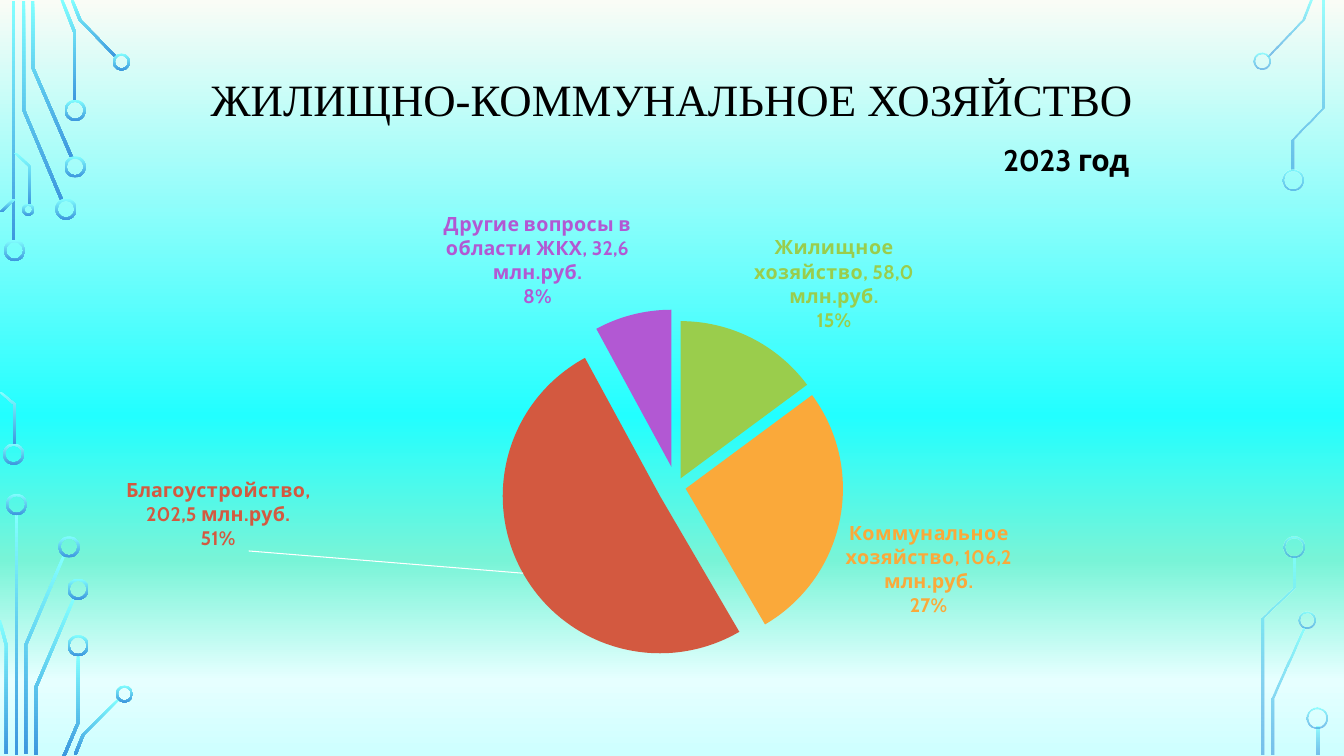
"""Build the housing and utilities budget slide: circuit border, title and pie chart."""
from pptx import Presentation
from pptx.chart.data import CategoryChartData
from pptx.dml.color import RGBColor
from pptx.enum.chart import XL_CHART_TYPE
from pptx.enum.shapes import MSO_SHAPE
from pptx.enum.text import MSO_ANCHOR, PP_ALIGN
from pptx.oxml import parse_xml
from pptx.oxml.ns import nsdecls, qn
from pptx.util import Pt

PX = 9144
SLIDE_SIZE = (1333, 750)
TITLE = "ЖИЛИЩНО-КОММУНАЛЬНОЕ ХОЗЯЙСТВО"
TITLE_BOX = (125, 68, 1083, 67)
CHART_BOX = (125, 129, 1083, 563)
CHART_TITLE = "2023 год"
CHART_TITLE_AT = (865, 4)
PIE_BOX = (390, 198, 312, 312)
SLICES = [
    ("Жилищное хозяйство, 58,0 млн.руб.", 15, "9ACD4C", 6, (0, 0)),
    ("Коммунальное хозяйство, 106,2 млн.руб.", 27, "FAA93A", 6, (0, 0)),
    ("Благоустройство, 202,5 млн.руб.", 51, "D35940", 12, (-267, -97)),
    ("Другие вопросы в области ЖКХ, 32,6 млн.руб.", 8, "B258D3", 13, (0, 0)),
]
BACKGROUND = [(0, "FAFCF6", 100), (55, "22FFFF", 100), (74, "78F4D7", 100),
              (90, "E6FFFF", 100), (100, "CDFFFF", 100)]
LEFT_GRADIENT = [(0, "82FFFF", 100), (100, "3D97DE", 100)]
RIGHT_GRADIENT = [(0, "82FFFF", 80), (100, "3D97DE", 60)]
TRACE_WIDTH = 3
RING_WIDTH = 2
LEFT_TRACES = [
    [(12, 1), (12, 240)], [(22, 1), (22, 109), (60, 199)],
    [(31, 1), (31, 67), (70, 157)], [(60, 0), (73, 33), (73, 100)],
    [(70, 0), (78, 20), (114, 57)], [(13, 197), (0, 210)],
    [(-1, 389), (13, 401), (13, 441)], [(14, 152), (28, 165), (28, 203)],
    [(15, 510), (15, 749)], [(62, 551), (24, 640), (24, 748)],
    [(-2, 615), (5, 641), (5, 748)], [(72, 593), (34, 682), (34, 749)],
    [(76, 650), (76, 717), (62, 750)], [(117, 693), (81, 729), (73, 749)],
]
RIGHT_TRACES = [
    [(1299, 0), (1291, 20), (1256, 56)], [(1292, 623), (1261, 693), (1261, 749)],
    [(1311, 1), (1311, 107), (1281, 138), (1281, 169)],
    [(1282, 552), (1282, 583), (1251, 613), (1251, 749)],
    [(1306, 721), (1306, 749)],
]
LEFT_RINGS = [(4, 238, 21), (3, 440, 21), (55, 197, 21), (64, 155, 21), (64, 99, 21),
              (112, 53, 17), (22, 202, 12), (6, 490, 21), (58, 532, 21), (67, 574, 21),
              (67, 630, 21), (115, 680, 17)]
RIGHT_RINGS = [(1243, 52, 17), (1272, 168, 21), (1288, 607, 17), (1273, 532, 21),
               (1296, 702, 21)]


def color(value):
    return RGBColor.from_string(value)


def emu(lengths):
    return [length * PX for length in lengths]


def fill_gradient(fill, element, stops):
    fill.gradient()
    fill.gradient_angle = 270
    stop_list = element.find(".//" + qn("a:gsLst"))
    entries = "".join(
        f'<a:gs pos="{position * 1000}"><a:srgbClr val="{value}">'
        f'<a:alpha val="{opacity * 1000}"/></a:srgbClr></a:gs>'
        for position, value, opacity in stops)
    stop_list.getparent().replace(
        stop_list, parse_xml(f'<a:gsLst {nsdecls("a")}>{entries}</a:gsLst>'))


def finish_shape(shape, stops):
    shape.shadow.inherit = False
    shape.line.fill.background()
    fill_gradient(shape.fill, shape._element, stops)


def add_trace(slide, left_edge, stops):
    right_edge = [(x + TRACE_WIDTH, y) for x, y in reversed(left_edge)]
    builder = slide.shapes.build_freeform(*left_edge[0], scale=PX)
    builder.add_line_segments(left_edge[1:] + right_edge, close=True)
    finish_shape(builder.convert_to_shape(), stops)


def add_ring(slide, left, top, size, stops):
    ring = slide.shapes.add_shape(MSO_SHAPE.DONUT, *emu((left, top, size, size)))
    ring.adjustments[0] = RING_WIDTH / size
    finish_shape(ring, stops)


def add_title(slide):
    frame = slide.shapes.add_textbox(*emu(TITLE_BOX)).text_frame
    frame.word_wrap = True
    frame.vertical_anchor = MSO_ANCHOR.MIDDLE
    paragraph = frame.paragraphs[0]
    paragraph.text = TITLE
    paragraph.alignment = PP_ALIGN.CENTER
    paragraph.line_spacing = 0.9
    paragraph.font.size = Pt(32)
    paragraph.font.name = "Times New Roman"
    paragraph.font.color.rgb = color("000000")


def layout_xml(x, y, size=None, mode="edge"):
    width, height = CHART_BOX[2:]
    target = '<c:layoutTarget val="inner"/>' if size else ""
    modes = '<c:xMode val="edge"/><c:yMode val="edge"/>' if mode == "edge" else ""
    extent = (f'<c:w val="{size[0] / width:.4f}"/><c:h val="{size[1] / height:.4f}"/>'
              if size else "")
    return (f'<c:layout {nsdecls("c")}><c:manualLayout>{target}{modes}'
            f'<c:x val="{x / width:.4f}"/><c:y val="{y / height:.4f}"/>{extent}'
            '</c:manualLayout></c:layout>')


def labels_xml():
    shown = ('<c:showLegendKey val="0"/><c:showVal val="1"/><c:showCatName val="1"/>'
             '<c:showSerName val="0"/><c:showPercent val="0"/><c:showBubbleSize val="0"/>'
             '<c:separator>\n</c:separator>')
    number_format = '<c:numFmt formatCode="0&quot;%&quot;" sourceLinked="0"/>'
    labels = "".join(
        f'<c:dLbl><c:idx val="{index}"/>'
        f'{layout_xml(*offset, mode="factor") if any(offset) else ""}{number_format}'
        '<c:txPr><a:bodyPr/><a:p><a:pPr><a:defRPr sz="1400" b="1"><a:solidFill>'
        f'<a:srgbClr val="{value}"/></a:solidFill><a:latin typeface="Cabin"/></a:defRPr>'
        f'</a:pPr></a:p></c:txPr><c:dLblPos val="outEnd"/>{shown}</c:dLbl>'
        for index, (_, _, value, _, offset) in enumerate(SLICES))
    return (f'<c:dLbls {nsdecls("c", "a")}>{labels}{number_format}'
            f'<c:dLblPos val="outEnd"/>{shown}<c:showLeaderLines val="1"/>'
            '<c:leaderLines><c:spPr><a:ln w="9525"><a:solidFill><a:srgbClr val="FFFFFF"/>'
            '</a:solidFill></a:ln></c:spPr></c:leaderLines></c:dLbls>')


def add_pie(slide):
    data = CategoryChartData(number_format="0")
    data.categories = [entry[0] for entry in SLICES]
    data.add_series(CHART_TITLE, [entry[1] for entry in SLICES])
    chart = slide.shapes.add_chart(XL_CHART_TYPE.PIE, *emu(CHART_BOX), data).chart
    chart.has_legend = False
    chart.font.size = Pt(10)
    chart.font.name = "Cabin"
    chart.font.color.rgb = color("FFFFFF")
    chart.has_title = True
    title = chart.chart_title
    title.include_in_layout = False
    paragraph = title.text_frame.paragraphs[0]
    paragraph.text = CHART_TITLE
    paragraph.font.size = Pt(21.3)
    paragraph.font.bold = True
    paragraph.font.name = "Cabin"
    paragraph.font.color.rgb = color("000000")
    plot_area = chart._chartSpace.find(".//" + qn("c:plotArea"))
    for element, layout in ((title._element, layout_xml(*CHART_TITLE_AT)),
                            (plot_area, layout_xml(*PIE_BOX[:2], PIE_BOX[2:]))):
        for old in element.findall(qn("c:layout")):
            element.remove(old)
        element.insert(1 if element is title._element else 0, parse_xml(layout))
    plot = chart.plots[0]
    plot.vary_by_categories = True
    series = plot.series[0]
    for index, (_, _, value, explosion, _) in enumerate(SLICES):
        point_format = series.points[index].format
        point_format.fill.solid()
        point_format.fill.fore_color.rgb = color(value)
        point_format.line.fill.background()
        point = series._element.findall(qn("c:dPt"))[index]
        point.find(qn("c:spPr")).addprevious(
            parse_xml(f'<c:explosion {nsdecls("c")} val="{explosion}"/>'))
    series._element.find(qn("c:cat")).addprevious(parse_xml(labels_xml()))


def main():
    presentation = Presentation()
    presentation.slide_width, presentation.slide_height = emu(SLIDE_SIZE)
    slide = presentation.slides.add_slide(presentation.slide_layouts[6])
    fill_gradient(slide.background.fill, slide._element, BACKGROUND)
    for traces, rings, stops in ((LEFT_TRACES, LEFT_RINGS, LEFT_GRADIENT),
                                 (RIGHT_TRACES, RIGHT_RINGS, RIGHT_GRADIENT)):
        for left_edge in traces:
            add_trace(slide, left_edge, stops)
        for ring in rings:
            add_ring(slide, *ring, stops)
    add_title(slide)
    add_pie(slide)
    presentation.save("out.pptx")


if __name__ == "__main__":
    main()
